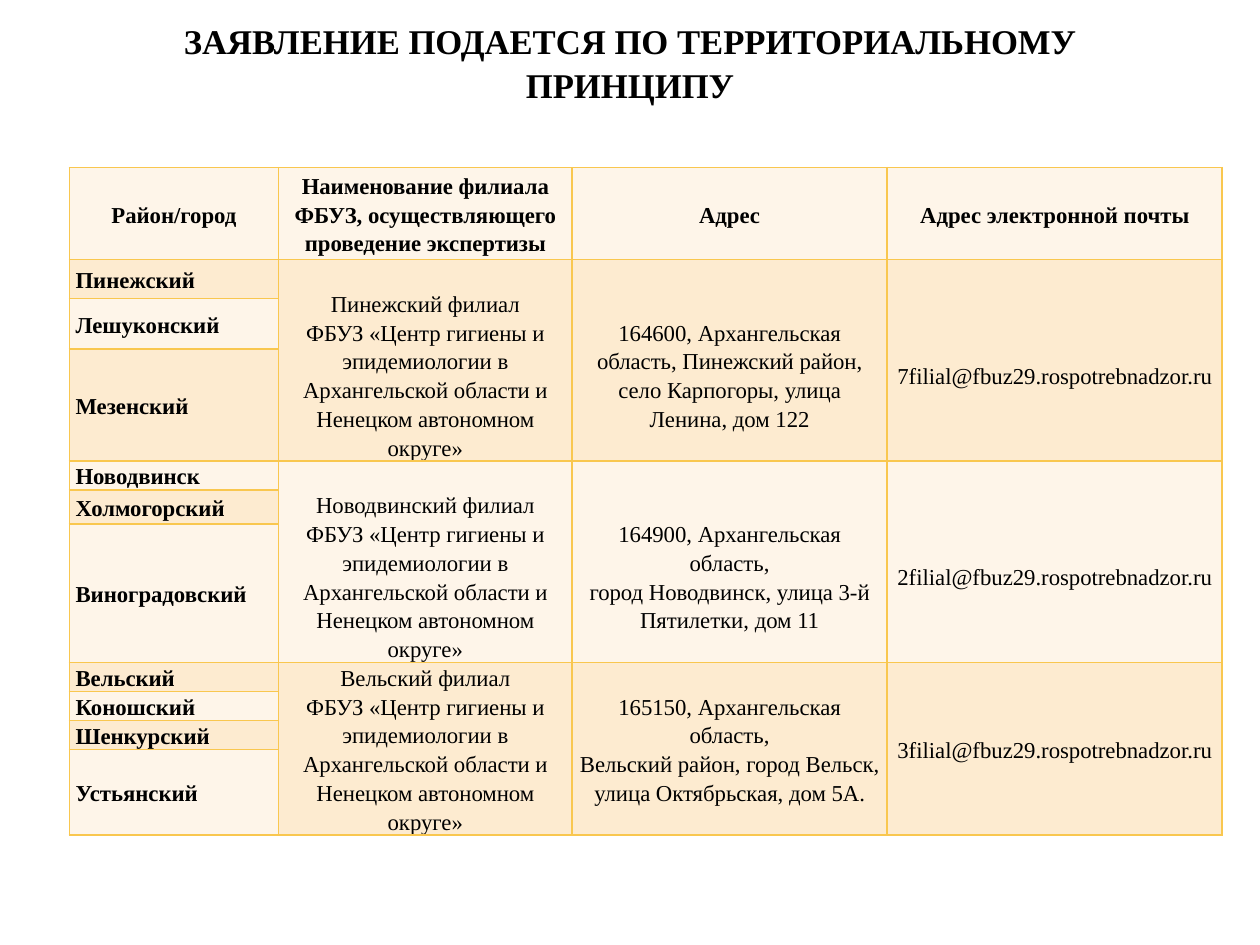
from pptx import Presentation
from pptx.dml.color import RGBColor
from pptx.enum.text import MSO_ANCHOR, PP_ALIGN
from pptx.oxml import parse_xml
from pptx.oxml.ns import nsdecls
from pptx.util import Inches, Pt

MIDDLE = MSO_ANCHOR.MIDDLE
LEFT, CENTER = PP_ALIGN.LEFT, PP_ALIGN.CENTER
BLACK = RGBColor(0x00, 0x00, 0x00)
LIGHT = RGBColor(0xFE, 0xF5, 0xE9)
DARK = RGBColor(0xFD, 0xEB, 0xD0)
GOLD = RGBColor(0xF9, 0xC7, 0x4F)
FONT = "Times New Roman"
LINE = 0.23

TITLE = "ЗАЯВЛЕНИЕ ПОДАЕТСЯ ПО ТЕРРИТОРИАЛЬНОМУ ПРИНЦИПУ"
HEADS = [
    "Район/город",
    "Наименование филиала ФБУЗ, осуществляющего проведение экспертизы",
    "Адрес",
    "Адрес электронной почты",
]
CENTRE = "«Центр гигиены и эпидемиологии в Архангельской области и Ненецком автономном округе»"
GROUPS = [
    {
        "towns": [("Пинежский", 0.31), ("Лешуконский", 0.4), ("Мезенский", 0.88)],
        "texts": [
            f"Пинежский филиал\nФБУЗ {CENTRE}",
            "164600, Архангельская область, Пинежский район, село Карпогоры, улица Ленина, дом 122",
            "7filial@fbuz29.rospotrebnadzor.ru",
        ],
        "drop": LINE,
    },
    {
        "towns": [("Новодвинск", 0.23), ("Холмогорский", 0.27), ("Виноградовский", 1.1)],
        "texts": [
            f"Новодвинский филиал ФБУЗ {CENTRE}",
            "164900, Архангельская область,\nгород Новодвинск, улица 3-й Пятилетки, дом 11",
            "2filial@fbuz29.rospotrebnadzor.ru",
        ],
        "drop": LINE,
    },
    {
        "towns": [("Вельский", 0.23), ("Коношский", 0.23), ("Шенкурский", 0.23), ("Устьянский", 0.68)],
        "texts": [
            f"Вельский филиал\nФБУЗ {CENTRE}",
            "165150, Архангельская область,\nВельский район, город Вельск, улица Октябрьская, дом 5А.",
            "3filial@fbuz29.rospotrebnadzor.ru",
        ],
        "drop": 0,
    },
]
COLS = [1.66, 2.33, 2.5, 2.66]
HEAD = 0.73


def style(para, size, bold, align):
    para.alignment = align
    for run in para.runs:
        font = run.font
        font.name, font.size, font.bold = FONT, Pt(size), bold
        font.color.rgb = BLACK


def paint(cell, fill):
    cell.fill.solid()
    cell.fill.fore_color.rgb = fill
    props = cell._tc.get_or_add_tcPr()
    for spot, side in enumerate(("lnL", "lnR", "lnT", "lnB")):
        props.insert(spot, parse_xml(
            f'<a:{side} {nsdecls("a")} w="{Pt(1)}"><a:solidFill>'
            f'<a:srgbClr val="{GOLD}"/></a:solidFill></a:{side}>'))


def write(cell, text, bold, align, drop=0):
    cell.vertical_anchor = MIDDLE
    cell.margin_left = cell.margin_right = Inches(0.05)
    cell.margin_top, cell.margin_bottom = Inches(drop), 0
    cell.text_frame.text = text
    for para in cell.text_frame.paragraphs:
        para.line_spacing = 1.15
        style(para, 13, bold, align)


deck = Presentation()
deck.slide_width, deck.slide_height = Inches(10), Inches(7.5)
slide = deck.slides.add_slide(deck.slide_layouts[5])

title = slide.shapes.title
title.left, title.top = Inches(0.5), Inches(0.3)
title.width, title.height = Inches(9), Inches(0.61)
frame = title.text_frame
frame.text = TITLE
frame.word_wrap = True
frame.vertical_anchor = MIDDLE
frame.margin_bottom = Inches(0.28)
frame.paragraphs[0].line_spacing = 1.05
style(frame.paragraphs[0], 19.8, True, CENTER)

rows = [HEAD] + [high for group in GROUPS for _, high in group["towns"]]
table = slide.shapes.add_table(
    len(rows), len(COLS), Inches(0.55), Inches(1.33),
    Inches(sum(COLS)), Inches(sum(rows))).table
for col, wide in zip(table.columns, COLS):
    col.width = Inches(wide)
for row, high in zip(table.rows, rows):
    row.height = Inches(high)

for col, text in enumerate(HEADS):
    paint(table.cell(0, col), LIGHT)
    write(table.cell(0, col), text, True, CENTER)

top = 1
for group in GROUPS:
    towns = group["towns"]
    base = DARK if top % 2 else LIGHT
    for row, (town, _) in enumerate(towns, top):
        paint(table.cell(row, 0), DARK if row % 2 else LIGHT)
        write(table.cell(row, 0), town, True, LEFT)
        for col in range(1, len(COLS)):
            paint(table.cell(row, col), base)
    for col, text in enumerate(group["texts"], 1):
        cell = table.cell(top, col)
        cell.merge(table.cell(top + len(towns) - 1, col))
        write(cell, text, False, CENTER, group["drop"])
    top += len(towns)

deck.save("out.pptx")
